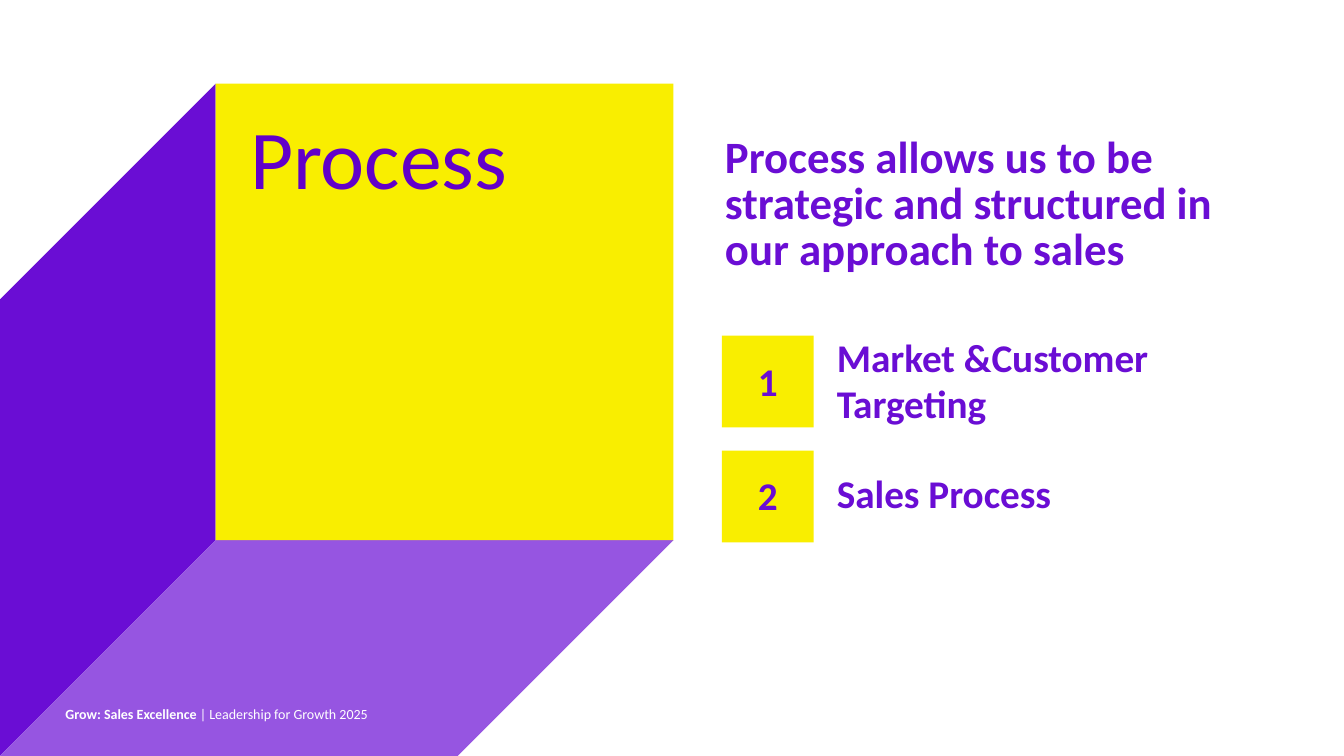
import pptx
import pptx.dml.color
import pptx.enum.shapes
import pptx.enum.text
import pptx.util
from dataclasses import dataclass

Inches = pptx.util.Inches
Pt = pptx.util.Pt
RECT = pptx.enum.shapes.MSO_SHAPE.RECTANGLE
ALIGN = pptx.enum.text.PP_ALIGN
ANCHOR = pptx.enum.text.MSO_ANCHOR


@dataclass(frozen=True)
class Theme:
    font: str = "Calibri"
    ink: str = "6A0DD4"
    title: str = "6200C9"
    floor: str = "9655E1"
    face: str = "F9EE00"
    white: str = "FFFFFF"
    huge: float = 59.7
    head: float = 32
    body: float = 28
    foot: float = 10
    line: float = 32.9


THEME = Theme()


def apply(item, form):
    for key, value in form.items():
        setattr(item, key, value)


def paint(shape, color):
    shape.shadow.inherit = False
    shape.fill.solid()
    shape.fill.fore_color.rgb = pptx.dml.color.RGBColor.from_string(color)
    shape.line.fill.background()


def write(shape, runs, size, color, left=0, top=0.07, anchor=ANCHOR.TOP,
          align=ALIGN.LEFT, pitch=None):
    frame = shape.text_frame
    apply(frame, {
        "word_wrap": True,
        "margin_left": Inches(left),
        "margin_top": Inches(top),
        "margin_right": 0,
        "margin_bottom": 0,
        "vertical_anchor": anchor,
    })
    para = frame.paragraphs[0]
    apply(para, {"alignment": align, "line_spacing": pitch})
    for text, bold in runs:
        run = para.add_run()
        run.text = text
        apply(run.font, {"name": THEME.font, "size": Pt(size), "bold": bold})
        run.font.color.rgb = pptx.dml.color.RGBColor.from_string(color)


def place(shapes, box):
    return shapes.add_textbox(*map(Inches, box))


def block(shapes, box):
    shape = shapes.add_shape(RECT, *map(Inches, box))
    paint(shape, THEME.face)
    return shape


def draw_cube(slide, box, depth):
    x, y, w, h = box
    side = h - depth
    parts = slide.shapes.add_group_shape().shapes
    sides = [
        (THEME.ink, [(depth, 0), (0, depth), (0, h), (depth, side)]),
        (THEME.floor, [(w, side), (depth, side), (0, h), (w - depth, h)]),
    ]
    for color, spots in sides:
        spots = [(Inches(x + a), Inches(y + b)) for a, b in spots]
        form = parts.build_freeform(*spots[0], scale=1.0)
        form.add_line_segments(spots[1:], close=True)
        paint(form.convert_to_shape(), color)
    front = block(parts, (x + depth, y, w - depth, side))
    write(front, [("Process", False)], THEME.huge, THEME.title,
          left=0.34, top=0.22)


def draw_head(slide, box):
    text = "Process allows us to be strategic and structured in our approach to sales"
    write(place(slide.shapes, box), [(text, True)], THEME.head, THEME.ink,
          pitch=Pt(THEME.line))


def draw_steps(slide, box, steps):
    x, y, w, h = box
    tile = 0.91
    gap = (h - tile) / (len(steps) - 1)
    inset = 1.14
    for i, (text, shift, tall, pitch) in enumerate(steps):
        top = y + i * gap
        mark = block(slide.shapes, (x, top, tile, tile))
        write(mark, [(str(i + 1), True)], THEME.body, THEME.ink,
              top=0.21, align=ALIGN.CENTER)
        label = place(slide.shapes, (x + inset, top + shift, w - inset, tall))
        write(label, [(text, True)], THEME.body, THEME.ink, pitch=pitch)


def draw_foot(slide, box):
    runs = [("Grow: Sales Excellence", True),
            (" | Leadership for Growth 2025", False)]
    write(place(slide.shapes, box), runs, THEME.foot, THEME.white,
          top=0, anchor=ANCHOR.MIDDLE)


def main():
    deck = pptx.Presentation()
    apply(deck, {"slide_width": Inches(13.33), "slide_height": Inches(7.5)})
    slide = deck.slides.add_slide(deck.slide_layouts[6])
    draw_cube(slide, (0, 0.83, 6.68, 6.67), 2.14)
    draw_head(slide, (7.19, 1.28, 5.41, 1.46))
    draw_steps(slide, (7.16, 3.33, 5.12, 2.05), [
        ("Market &Customer Targeting", -0.08, 1, Pt(THEME.line)),
        ("Sales Process", 0.12, 0.54, None),
    ])
    draw_foot(slide, (0.65, 7, 4.27, 0.17))
    deck.save("out.pptx")


if __name__ == "__main__":
    main()
